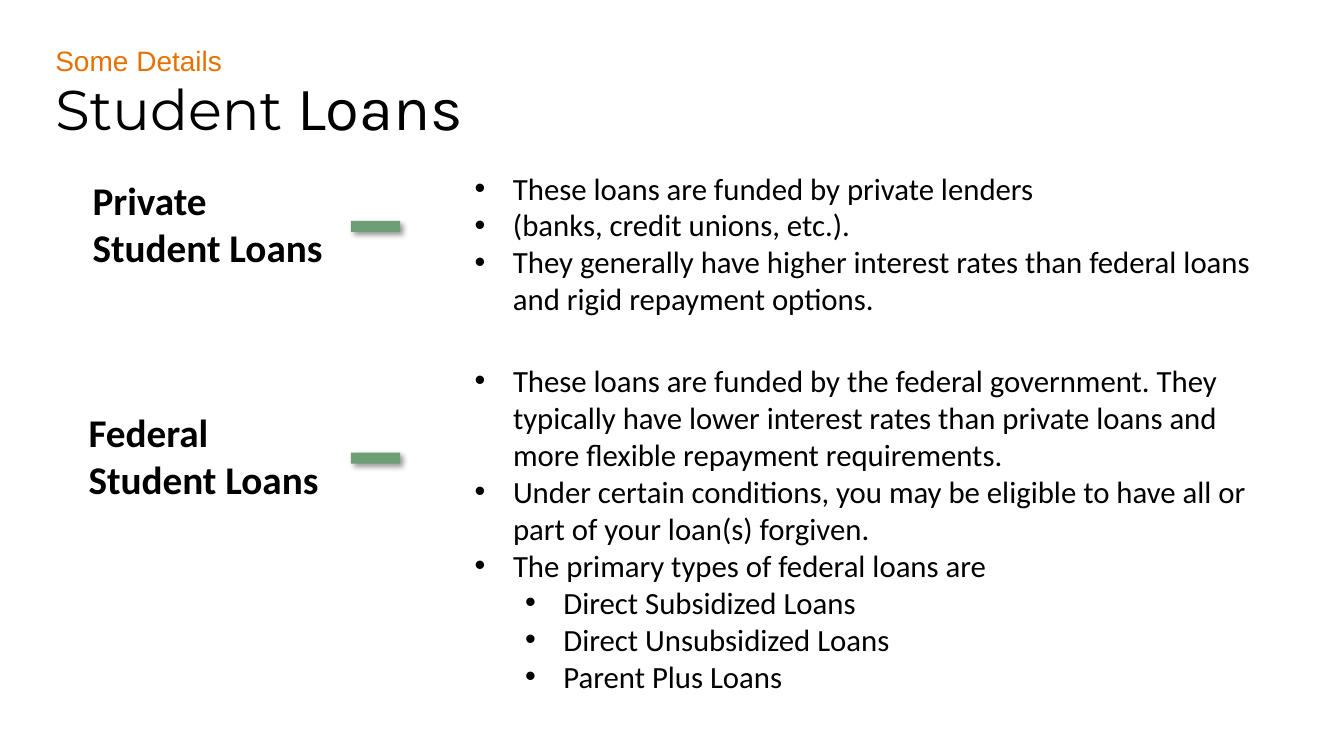
from lxml import etree
from pptx import Presentation
from pptx.dml.color import RGBColor
from pptx.enum.shapes import MSO_SHAPE as Preset
from pptx.enum.text import MSO_ANCHOR as Anchor, PP_ALIGN as Align
from pptx.oxml import parse_xml
from pptx.oxml.ns import nsdecls, qn
from pptx.util import Inches, Pt

COLORS = {"black": "000000", "white": "FFFFFF", "orange": "E57200", "green": "6E9E75"}
BULLET_INDENT = 0.38
LEVEL_STEP = 0.5

PRIVATE_POINTS = [
    (0, "These loans are funded by private lenders"),
    (0, "(banks, credit unions, etc.)."),
    (0, "They generally have higher interest rates than federal loans and rigid repayment options."),
]
FEDERAL_POINTS = [
    (0, "These loans are funded by the federal government. They typically have lower "
        "interest rates than private loans and more flexible repayment requirements."),
    (0, "Under certain conditions, you may be eligible to have all or part of your loan(s) forgiven."),
    (0, "The primary types of federal loans are"),
    (1, "Direct Subsidized Loans"),
    (1, "Direct Unsubsidized Loans"),
    (1, "Parent Plus Loans"),
]


def color(name):
    return RGBColor.from_string(COLORS[name])


def add_run(paragraph, text, size, font="Calibri", tint="black", bold=False):
    run = paragraph.add_run()
    run.text = text
    run.font.name = font
    run.font.size = Pt(size)
    run.font.bold = bold
    run.font.color.rgb = color(tint)


def add_text(slide, box, runs):
    shape = slide.shapes.add_textbox(*map(Inches, box))
    shape.text_frame.word_wrap = True
    for run in runs:
        add_run(shape.text_frame.paragraphs[0], *run)


def add_rectangle(slide, box, fill):
    shape = slide.shapes.add_shape(Preset.RECTANGLE, *map(Inches, box))
    shape.shadow.inherit = False
    shape.fill.solid()
    shape.fill.fore_color.rgb = color(fill)
    shape.line.fill.background()
    return shape


def add_dash(slide, box):
    shape = add_rectangle(slide, box, "green")
    effects = shape._element.spPr.find(qn("a:effectLst"))
    effects.append(parse_xml(
        f'<a:outerShdw {nsdecls("a")} blurRad="{Pt(4)}" dist="{Pt(3)}" dir="2700000" '
        f'algn="tl" rotWithShape="0"><a:srgbClr val="{COLORS["black"]}">'
        '<a:alpha val="40000"/></a:srgbClr></a:outerShdw>'))


def add_points(slide, box, points):
    frame = add_rectangle(slide, box, "white").text_frame
    frame.word_wrap = True
    frame.vertical_anchor = Anchor.TOP
    for index, (level, text) in enumerate(points):
        paragraph = frame.add_paragraph() if index else frame.paragraphs[0]
        paragraph.alignment = Align.LEFT
        paragraph.level = level
        properties = paragraph._p.get_or_add_pPr()
        properties.set("marL", str(Inches(BULLET_INDENT + level * LEVEL_STEP)))
        properties.set("indent", str(Inches(-BULLET_INDENT)))
        etree.SubElement(properties, qn("a:buFont"), typeface="Arial")
        etree.SubElement(properties, qn("a:buChar"), char="•")
        add_run(paragraph, text, 22)


def add_header(slide, left, top):
    add_text(slide, (left, top, 6.57, 0.44), [("Some Details", 20, "Arial", "orange")])
    add_text(slide, (left, top + 0.25, 7.28, 0.84),
             [("Student ", 40, "Montserrat"), ("Loans", 44, "Karla")])


def add_loan_type(slide, label, label_left, label_top, points, points_box):
    add_dash(slide, (3.48, label_top + 0.49, 0.49, 0.11))
    add_text(slide, (label_left, label_top, 2.66, 1.04),
             [(label, 28, "Calibri", "black", True)])
    add_points(slide, points_box, points)


def main():
    presentation = Presentation()
    presentation.slide_width = Inches(13.33)
    presentation.slide_height = Inches(7.5)
    slide = presentation.slides.add_slide(presentation.slide_layouts[6])
    add_header(slide, 0.45, 0.38)
    add_loan_type(slide, "Private Student Loans", 0.82, 1.7,
                  PRIVATE_POINTS, (4.61, 1.63, 8.27, 1.58))
    add_loan_type(slide, "Federal Student Loans", 0.78, 4,
                  FEDERAL_POINTS, (4.61, 3.54, 8.15, 3.43))
    presentation.save("out.pptx")


if __name__ == "__main__":
    main()
